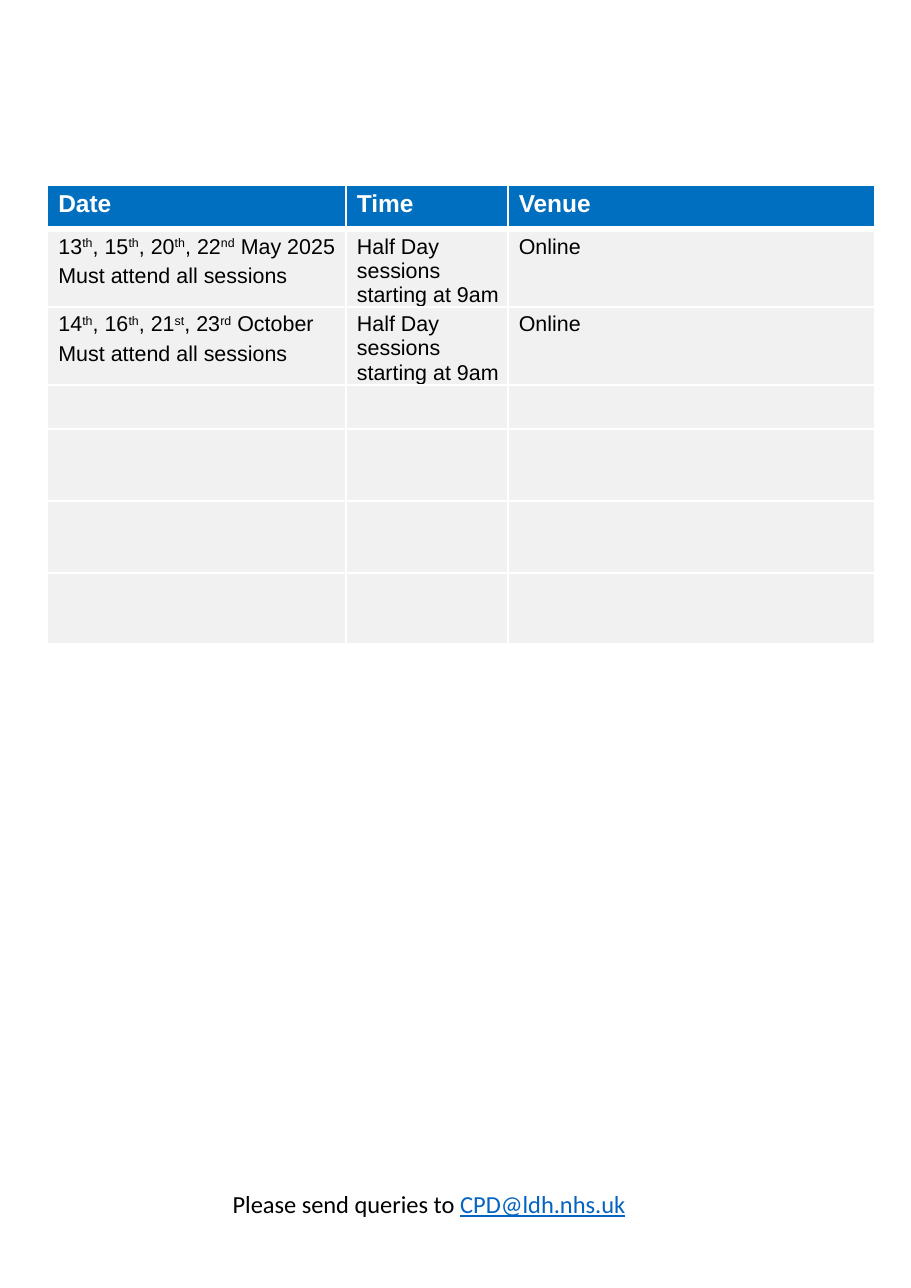
from dataclasses import dataclass

from lxml.etree import SubElement
from pptx import Presentation
from pptx.dml.color import RGBColor
from pptx.enum.text import MSO_ANCHOR, PP_ALIGN
from pptx.oxml.ns import qn
from pptx.util import Emu, Pt

PX = 9144
WHITE, BLACK, BLUE, GREY, LINK = "FFFFFF", "000000", "006FC0", "F1F1F2", "0563C1"
THIN, THICK = 1.5, 4.5


@dataclass
class Style:
    size: float
    colour: str
    face: str = "Arial"
    bold: bool = False
    underline: bool = False


@dataclass
class Row:
    height: int
    texts: tuple[str, ...] = ("", "", "")


HEADING = Style(16, WHITE, bold=True)
BODY = Style(14, BLACK)
QUERY = Style(16, BLACK, "Calibri")
ADDRESS = Style(16, LINK, "Calibri", underline=True)

COLUMN_WIDTHS = (271, 147, 333)
TIMES = "Half Day sessions starting at 9am"
ATTENDANCE = "Must attend all sessions"
SESSIONS = (
    Row(40, ("Date", "Time", "Venue")),
    Row(70, (f"13^th^, 15^th^, 20^th^, 22^nd^ May 2025\n{ATTENDANCE}", TIMES, "Online")),
    Row(70, (f"14^th^, 16^th^, 21^st^, 23^rd^ October\n{ATTENDANCE}", TIMES, "Online")),
    Row(40),
    Row(65),
    Row(65),
    Row(65),
)


def px(length: int) -> Emu:
    return Emu(length * PX)


def rgb(colour: str) -> RGBColor:
    return RGBColor.from_string(colour)


def add_run(paragraph, text: str, style: Style, raised: bool = False) -> None:
    run = paragraph.add_run()
    run.text = text
    formats = {
        "name": style.face,
        "size": Pt(style.size),
        "bold": style.bold,
        "underline": style.underline,
    }
    for name, value in formats.items():
        setattr(run.font, name, value)
    run.font.color.rgb = rgb(style.colour)
    if raised:
        run.font._element.set("baseline", "30000")


def set_borders(cell, top: float, bottom: float) -> None:
    properties = cell._tc.get_or_add_tcPr()
    widths = {"lnL": THIN, "lnR": THIN, "lnT": top, "lnB": bottom}
    for position, (side, width) in enumerate(widths.items()):
        line = SubElement(properties, qn(f"a:{side}"), w=str(Pt(width)))
        fill = SubElement(line, qn("a:solidFill"))
        SubElement(fill, qn("a:srgbClr"), val=WHITE)
        properties.insert(position, line)


def fill_cell(cell, text: str, style: Style, colour: str) -> None:
    cell.fill.solid()
    cell.fill.fore_color.rgb = rgb(colour)
    if not text:
        return
    formats = {
        "margin_left": px(10),
        "margin_top": px(5),
        "margin_right": 0,
        "margin_bottom": 0,
        "vertical_anchor": MSO_ANCHOR.TOP,
    }
    for name, value in formats.items():
        setattr(cell, name, value)
    for number, line in enumerate(text.split("\n")):
        if number:
            paragraph = cell.text_frame.add_paragraph()
            paragraph.space_before = Pt(3.5)
        else:
            paragraph = cell.text_frame.paragraphs[0]
        for index, piece in enumerate(line.split("^")):
            add_run(paragraph, piece, style, raised=index % 2 == 1)


def add_schedule(slide) -> None:
    schedule = slide.shapes.add_table(
        len(SESSIONS), len(COLUMN_WIDTHS), px(43), px(168),
        px(sum(COLUMN_WIDTHS)), px(sum(row.height for row in SESSIONS)),
    ).table
    schedule.horz_banding = False
    for column, width in zip(schedule.columns, COLUMN_WIDTHS):
        column.width = px(width)
    for number, session in enumerate(SESSIONS):
        schedule.rows[number].height = px(session.height)
        style, colour = (BODY, GREY) if number else (HEADING, BLUE)
        for cell, text in zip(schedule.rows[number].cells, session.texts):
            fill_cell(cell, text, style, colour)
            set_borders(
                cell,
                top=THICK if number == 1 else THIN,
                bottom=THICK if number == 0 else THIN,
            )


def add_contact(slide) -> None:
    contact = slide.shapes.add_textbox(px(38), px(1074), px(703), px(37)).text_frame
    contact.word_wrap = True
    paragraph = contact.paragraphs[0]
    paragraph.alignment = PP_ALIGN.CENTER
    add_run(paragraph, "Please send queries to ", QUERY)
    add_run(paragraph, "CPD@ldh.nhs.uk", ADDRESS)


def main() -> None:
    deck = Presentation()
    deck.slide_width, deck.slide_height = px(827), px(1169)
    slide = deck.slides.add_slide(deck.slide_layouts[6])
    add_schedule(slide)
    add_contact(slide)
    deck.save("out.pptx")


if __name__ == "__main__":
    main()
